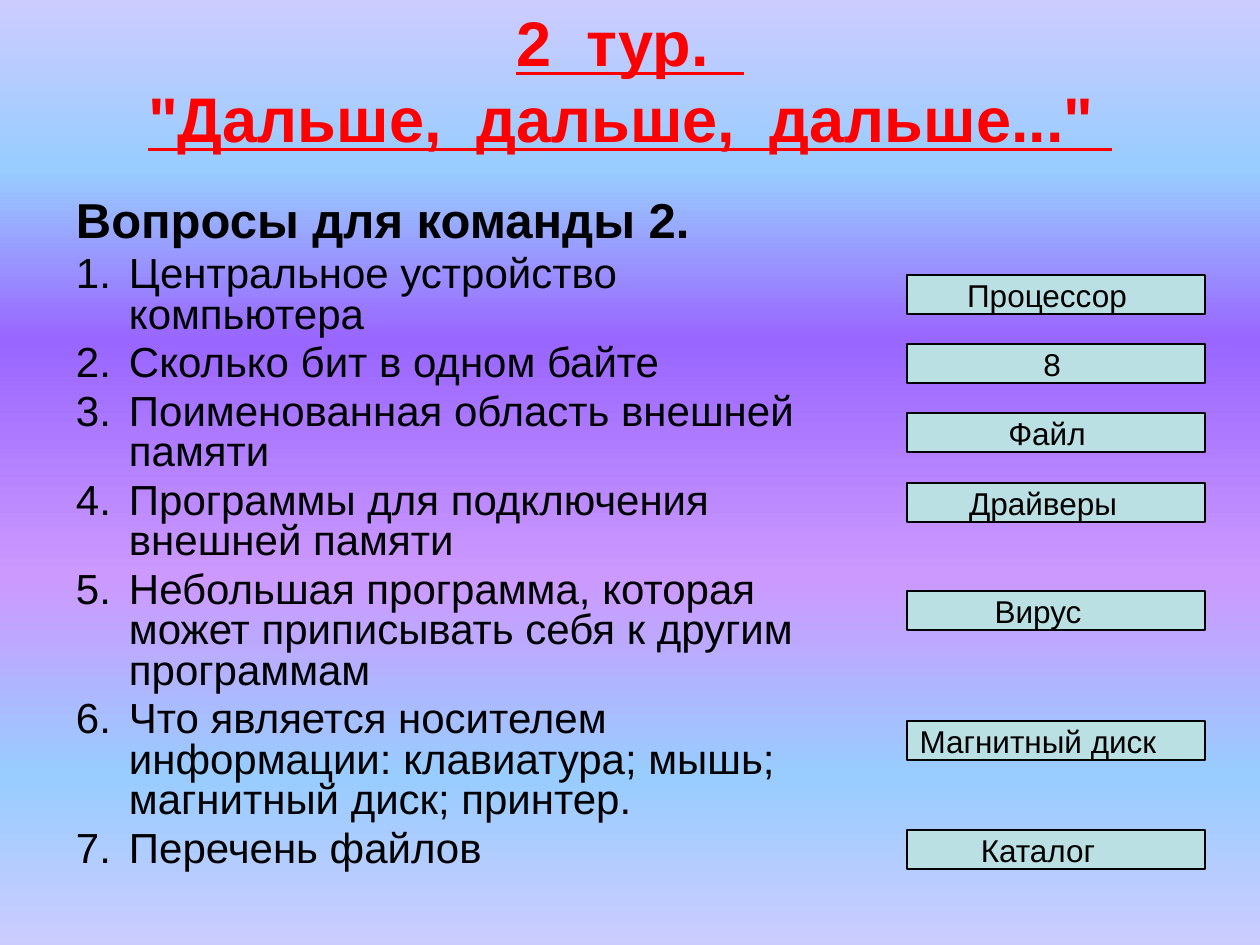
from lxml import etree
from pptx import Presentation
from pptx import util as u
from pptx.dml.color import RGBColor
from pptx.enum import shapes, text
from pptx.oxml.ns import qn

SCALE = 914400 / 126
FONT = "Arial"
COLORS = {"title": "FF0000", "text": "000000", "answer": "BBE0E3", "line": "000000"}
GRADIENT = [(0, "CCCCFF"), (18, "99CCFF"), (36, "9966FF"),
            (61, "CC99FF"), (82, "99CCFF"), (100, "CCCCFF")]

TITLE = ["2\u00a0 тур.\u00a0 ", "\"Дальше,\u00a0 дальше,\u00a0 дальше...\"\u00a0"]
HEADING = "Вопросы для команды 2."
QUESTIONS = [
    "Центральное устройство компьютера",
    "Сколько бит в одном байте",
    "Поименованная область внешней памяти",
    "Программы для подключения внешней памяти",
    "Небольшая программа, которая может приписывать себя к другим программам",
    "Что является носителем информации: клавиатура; мышь; магнитный диск; принтер.",
    "Перечень файлов",
]
# answer, top within the column, shift of the text to the left
ANSWERS = [("Процессор", 0, 9), ("8", 69, 4), ("Файл", 138, 9), ("Драйверы", 208, 13),
           ("Вирус", 316, 18), ("Магнитный диск", 446, 18), ("Каталог", 555, 18)]


def px(n):
    return u.Emu(round(n * SCALE))


def rgb(name):
    return RGBColor.from_string(COLORS[name])


def add_run(p, words, size, color="text", bold=False, underline=False):
    r = p.add_run()
    r.text = words
    f = r.font
    f.name, f.size, f.bold, f.underline = FONT, u.Pt(size), bold, underline
    f.color.rgb = rgb(color)


def set_margins(tf, left, top, right, bottom):
    tf.margin_left, tf.margin_top = px(left), px(top)
    tf.margin_right, tf.margin_bottom = px(right), px(bottom)


def add_text_frame(s, x, y, w, h):
    tf = s.shapes.add_textbox(px(x), px(y), px(w), px(h)).text_frame
    tf.word_wrap = True
    return tf


def paint_background(s):
    fill = s.background.fill
    fill.gradient()
    grad = s.background._cSld.find(".//" + qn("a:gradFill"))
    stops = grad.find(qn("a:gsLst"))
    for stop in list(stops):
        stops.remove(stop)
    for pos, color in GRADIENT:
        stop = etree.SubElement(stops, qn("a:gs"), pos=str(pos * 1000))
        etree.SubElement(stop, qn("a:srgbClr"), val=color)
    lin = grad.find(qn("a:lin"))
    lin.set("ang", str(90 * 60000))
    lin.set("scaled", "0")


def add_title(s, x, y, w, h):
    tf = add_text_frame(s, x, y, w, h)
    tf.vertical_anchor = text.MSO_ANCHOR.MIDDLE
    set_margins(tf, 13, 6, 13, 80)
    p = tf.paragraphs[0]
    p.alignment = text.PP_ALIGN.CENTER
    for i, line in enumerate(TITLE):
        if i:
            p.add_line_break()
        add_run(p, line, 36, "title", bold=True, underline=True)


def add_questions(s, x, y, w, h):
    tf = add_text_frame(s, x, y, w, h)
    set_margins(tf, 13, 6, 40, 6)
    for i, words in enumerate([HEADING] + QUESTIONS):
        p = tf.add_paragraph() if i else tf.paragraphs[0]
        p.line_spacing = 0.8
        p.space_before = u.Pt(4.8 if i else 5.6)
        if i:
            pr = p._p.get_or_add_pPr()
            pr.set("marL", str(px(53)))
            pr.set("indent", str(-px(53)))
            etree.SubElement(pr, qn("a:buFont"), typeface=FONT)
            etree.SubElement(pr, qn("a:buAutoNum"), type="arabicPeriod")
        add_run(p, words, 24 if i else 28, bold=not i)


def add_answers(s, x, y, w, h):
    """Stack answer boxes of size w by h below (x, y)."""
    for words, top, shift in ANSWERS:
        sp = s.shapes.add_shape(shapes.MSO_SHAPE.RECTANGLE, px(x), px(y + top), px(w), px(h))
        sp.shadow.inherit = False
        sp.fill.solid()
        sp.fill.fore_color.rgb = rgb("answer")
        sp.line.color.rgb = rgb("line")
        sp.line.width = u.Pt(0.75)
        tf = sp.text_frame
        tf.word_wrap = True
        tf.vertical_anchor = text.MSO_ANCHOR.MIDDLE
        set_margins(tf, 4, 0, 4 + 2 * shift, 0)
        p = tf.paragraphs[0]
        p.alignment = text.PP_ALIGN.CENTER
        add_run(p, words, 18)


def main():
    prs = Presentation()
    prs.slide_width, prs.slide_height = px(1260), px(945)
    s = prs.slides.add_slide(prs.slide_layouts[6])
    paint_background(s)
    add_title(s, 63, 38, 1134, 157)
    add_questions(s, 63, 195, 825, 735)
    add_answers(s, 907, 275, 298, 39)
    prs.save("out.pptx")


if __name__ == "__main__":
    main()
